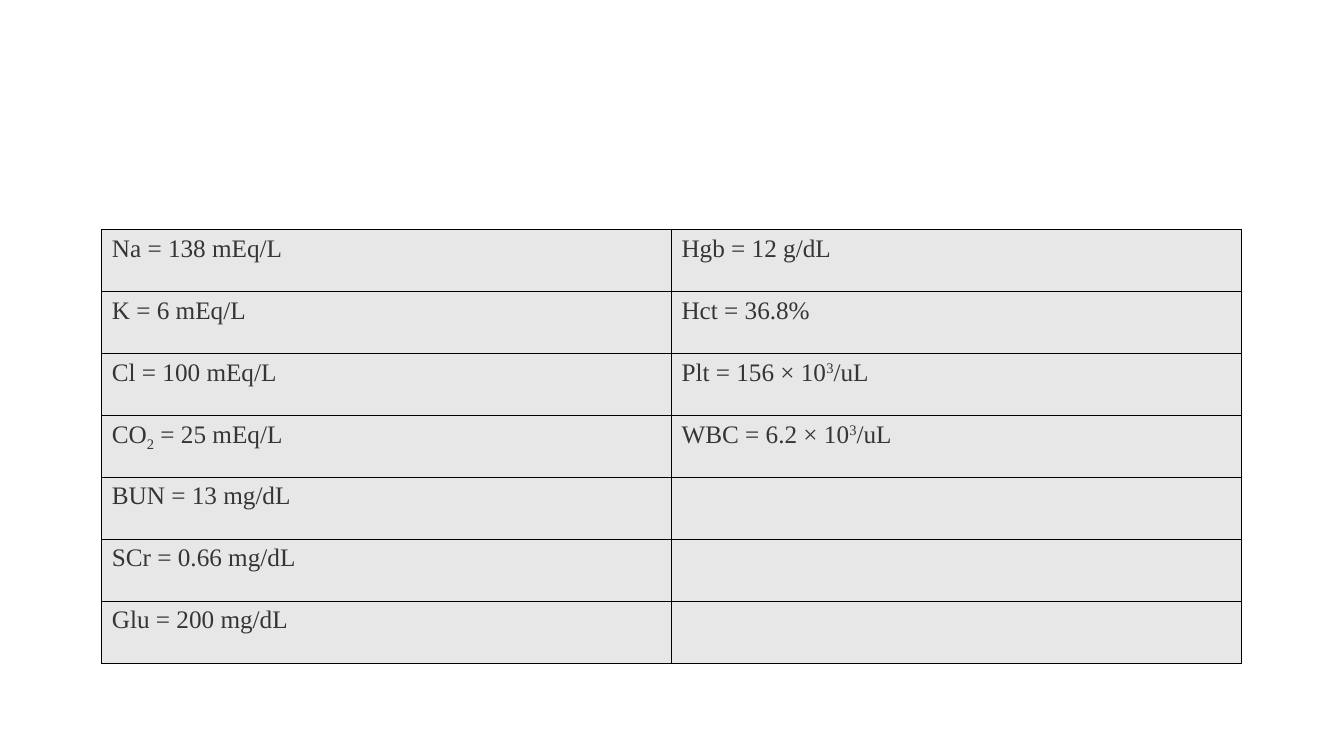
from lxml.etree import SubElement
from pptx import Presentation
from pptx.dml.color import RGBColor
from pptx.oxml.ns import qn
from pptx.util import Inches, Pt

INK, CELL_GREY, BORDER = "343536", "E7E7E7", "000000"
FONT = {"name": "Times New Roman", "size": Pt(18)}
SUPERSCRIPT, SUBSCRIPT = 30, -25

LAB_VALUES = [
    (["Na = 138 mEq/L"], ["Hgb = 12 g/dL"]),
    (["K = 6 mEq/L"], ["Hct = 36.8%"]),
    (["Cl = 100 mEq/L"], ["Plt = 156 × 10", ("3", SUPERSCRIPT), "/uL"]),
    (["CO", ("2", SUBSCRIPT), " = 25 mEq/L"],
     ["WBC = 6.2 × 10", ("3", SUPERSCRIPT), "/uL"]),
    (["BUN = 13 mg/dL"], []),
    (["SCr = 0.66 mg/dL"], []),
    (["Glu = 200 mg/dL"], []),
]


def colour(value):
    return RGBColor.from_string(value)


def add_span(para, text, baseline=0):
    span = para.add_run()
    span.text = text
    for name, value in FONT.items():
        setattr(span.font, name, value)
    span.font.color.rgb = colour(INK)
    if baseline:
        span.font._element.set("baseline", str(baseline * 1000))


def add_borders(cell):
    properties = cell._tc.get_or_add_tcPr()
    for position, side in enumerate(("lnL", "lnR", "lnT", "lnB")):
        line = SubElement(properties, qn(f"a:{side}"), w=str(Pt(1)))
        fill = SubElement(line, qn("a:solidFill"))
        SubElement(fill, qn("a:srgbClr"), val=BORDER)
        properties.insert(position, line)


def fill_cell(cell, pieces):
    cell.fill.solid()
    cell.fill.fore_color.rgb = colour(CELL_GREY)
    add_borders(cell)
    para = cell.text_frame.paragraphs[0]
    for piece in pieces:
        if isinstance(piece, tuple):
            add_span(para, *piece)
        else:
            add_span(para, piece)


def add_lab_table(page, left, top, width, row_height):
    frame = page.shapes.add_table(
        len(LAB_VALUES), 2, Inches(left), Inches(top),
        Inches(width), Inches(row_height * len(LAB_VALUES)))
    table = frame.table
    table.first_row = False
    table.horz_banding = False
    for row, values in enumerate(LAB_VALUES):
        for column, pieces in enumerate(values):
            fill_cell(table.cell(row, column), pieces)


def main():
    deck = Presentation()
    deck.slide_width, deck.slide_height = Inches(13.33), Inches(7.5)
    page = deck.slides.add_slide(deck.slide_layouts[6])
    add_lab_table(page, left=1.01, top=2.28, width=11.3, row_height=4.3 / 7)
    deck.save("out.pptx")


if __name__ == "__main__":
    main()
